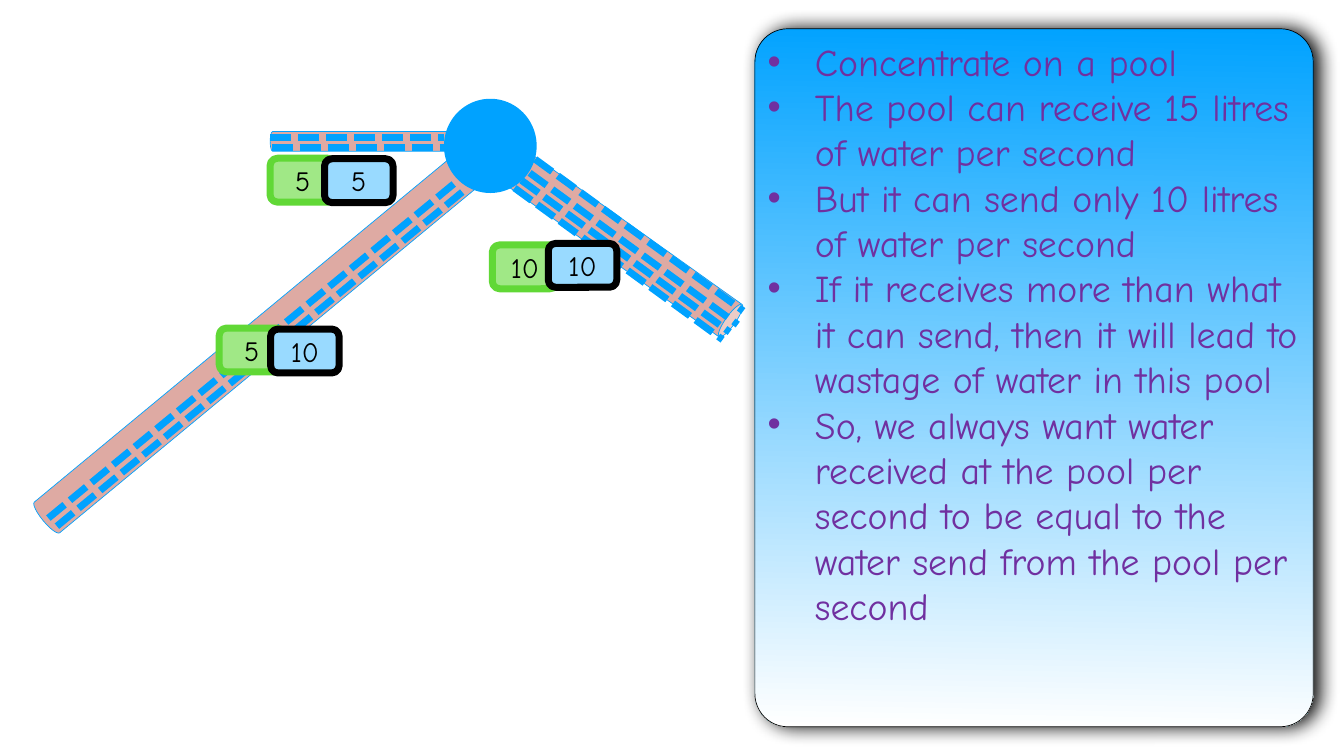
from lxml.etree import SubElement
from pptx import Presentation
from pptx.dml.color import RGBColor
from pptx.enum.dml import MSO_LINE
from pptx.enum.shapes import MSO_CONNECTOR, MSO_SHAPE
from pptx.enum.text import MSO_ANCHOR, PP_ALIGN
from pptx.oxml.ns import qn
from pptx.util import Inches, Pt

COLORS = {
    "water": "00A2FF", "pipe": "A61500", "white": "FFFFFF", "black": "000000",
    "purple": "7030A0", "capacity": "A0E886", "capacity_edge": "61D836",
    "flow": "99DAFF",
}
FONT = "Comic Neue"
WIDTH, HEIGHT = 26.67, 15

NOTES = [
    "Concentrate on a pool",
    "The pool can receive 15 litres of water per second",
    "But it can send only 10 litres of water per second",
    "If it receives more than what it can send, then it will lead to wastage "
    "of water in this pool",
    "So, we always want water received at the pool per second to be equal to "
    "the water send from the pool per second",
]
PANEL = (14.98, 0.57, 11.08, 13.85)
POOL = (8.81, 1.96, 1.84, 1.87)

# box and rotation of the pipe, then the shared run and starts of its streams
PIPES = [
    {"box": (11.87, 1.93, 0.79, 5.68), "angle": 125.5, "run": (4.13, 3.01),
     "starts": [(10.21, 3.73), (10.35, 3.58), (10.51, 3.43), (10.62, 3.16)]},
    {"box": (4.71, 1.3, 0.79, 11.03), "angle": 50.4, "run": (8.08, -6.66),
     "starts": [(0.96, 10.28), (1.13, 10.44)]},
    {"box": (7.02, 0.95, 0.39, 3.71), "angle": 90, "run": (3.45, 0),
     "starts": [(5.36, 2.72), (5.39, 2.92)]},
]

# label, left and top of the flow and capacity tags beside each pipe
TAG_HEIGHT = 0.87
TAG_STYLES = [
    {"width": 1.29, "fill": "capacity", "edge": "capacity_edge"},
    {"width": 1.36, "fill": "flow", "edge": "black"},
]
TAG_PAIRS = [
    [("5", 4.35, 6.51), ("10", 5.37, 6.53)],
    [("5", 5.36, 3.14), ("5", 6.44, 3.15)],
    [("10", 9.77, 4.86), ("10", 10.88, 4.83)],
]


def color(name):
    return RGBColor.from_string(COLORS[name])


def add_shape(slide, kind, box, fill=None, edge=None, edge_width=1):
    shape = slide.shapes.add_shape(kind, *map(Inches, box))
    shape.shadow.inherit = False
    if fill:
        shape.fill.solid()
        shape.fill.fore_color.rgb = color(fill)
    if edge:
        shape.line.color.rgb = color(edge)
        shape.line.width = Pt(edge_width)
    else:
        shape.line.fill.background()
    return shape


def format_frame(shape, **changes):
    frame = shape.text_frame
    settings = {"word_wrap": True, "vertical_anchor": MSO_ANCHOR.MIDDLE}
    for side in ("left", "right", "top", "bottom"):
        settings["margin_" + side] = Inches(0.06)
    for name, value in (settings | changes).items():
        setattr(frame, name, value)
    return frame


def write(paragraph, text, size, color_name, alignment):
    paragraph.alignment = alignment
    run = paragraph.add_run()
    run.text = text
    for name, value in {"name": FONT, "size": Pt(size)}.items():
        setattr(run.font, name, value)
    run.font.color.rgb = color(color_name)


def add_pipe(slide, pipe):
    shape = add_shape(slide, MSO_SHAPE.CAN, pipe["box"], "pipe", "water")
    shape.rotation = pipe["angle"]
    fill_color = shape.fill._xPr.find(qn("a:solidFill"))[0]
    SubElement(fill_color, qn("a:alpha"), val="36000")


def add_streams(slide, pipe):
    run_x, run_y = pipe["run"]
    for x, y in pipe["starts"]:
        ends = map(Inches, (x, y, x + run_x, y + run_y))
        stream = slide.shapes.add_connector(MSO_CONNECTOR.STRAIGHT, *ends)
        stream.line.color.rgb = color("water")
        stream.line.width = Pt(10)
        stream.line.dash_style = MSO_LINE.SQUARE_DOT
        SubElement(stream._element.spPr, qn("a:effectLst"))


def add_panel(slide):
    panel = add_shape(slide, MSO_SHAPE.ROUNDED_RECTANGLE, PANEL, edge="black")
    panel.adjustments[0] = 0.059
    panel.fill.gradient()
    panel.fill.gradient_angle = 269
    for stop, name in zip(panel.fill.gradient_stops, ("water", "white")):
        stop.color.rgb = color(name)

    effects = panel._element.spPr.find(qn("a:effectLst"))
    shadow = SubElement(effects, qn("a:outerShdw"), blurRad=str(Pt(28)),
                        dist=str(Pt(9)), dir="0", rotWithShape="0")
    shade = SubElement(shadow, qn("a:srgbClr"), val=COLORS["black"])
    SubElement(shade, qn("a:alpha"), val="97000")

    frame = format_frame(panel, vertical_anchor=MSO_ANCHOR.TOP, margin_top=0)
    for index, note in enumerate(NOTES):
        paragraph = frame.add_paragraph() if index else frame.paragraphs[0]
        properties = paragraph._p.get_or_add_pPr()
        properties.set("marL", str(Inches(0.94)))
        properties.set("indent", str(Inches(-0.94)))
        SubElement(properties, qn("a:buFont"), typeface="Arial")
        SubElement(properties, qn("a:buChar"), char="•")
        write(paragraph, note, 54, "purple", PP_ALIGN.LEFT)


def add_tag(slide, label, left, top, style):
    tag = add_shape(slide, MSO_SHAPE.ROUNDED_RECTANGLE,
                    (left, top, style["width"], TAG_HEIGHT),
                    style["fill"], style["edge"], 10)
    frame = format_frame(tag)
    write(frame.paragraphs[0], label, 40, "black", PP_ALIGN.CENTER)


def main():
    presentation = Presentation()
    presentation.slide_width = Inches(WIDTH)
    presentation.slide_height = Inches(HEIGHT)
    slide = presentation.slides.add_slide(presentation.slide_layouts[6])

    for pipe in PIPES:
        add_pipe(slide, pipe)
    add_shape(slide, MSO_SHAPE.OVAL, POOL, "water")
    add_panel(slide)
    for pipe in PIPES:
        add_streams(slide, pipe)
    for pair in TAG_PAIRS:
        for (label, left, top), style in zip(pair, TAG_STYLES):
            add_tag(slide, label, left, top, style)

    presentation.save("out.pptx")


if __name__ == "__main__":
    main()
